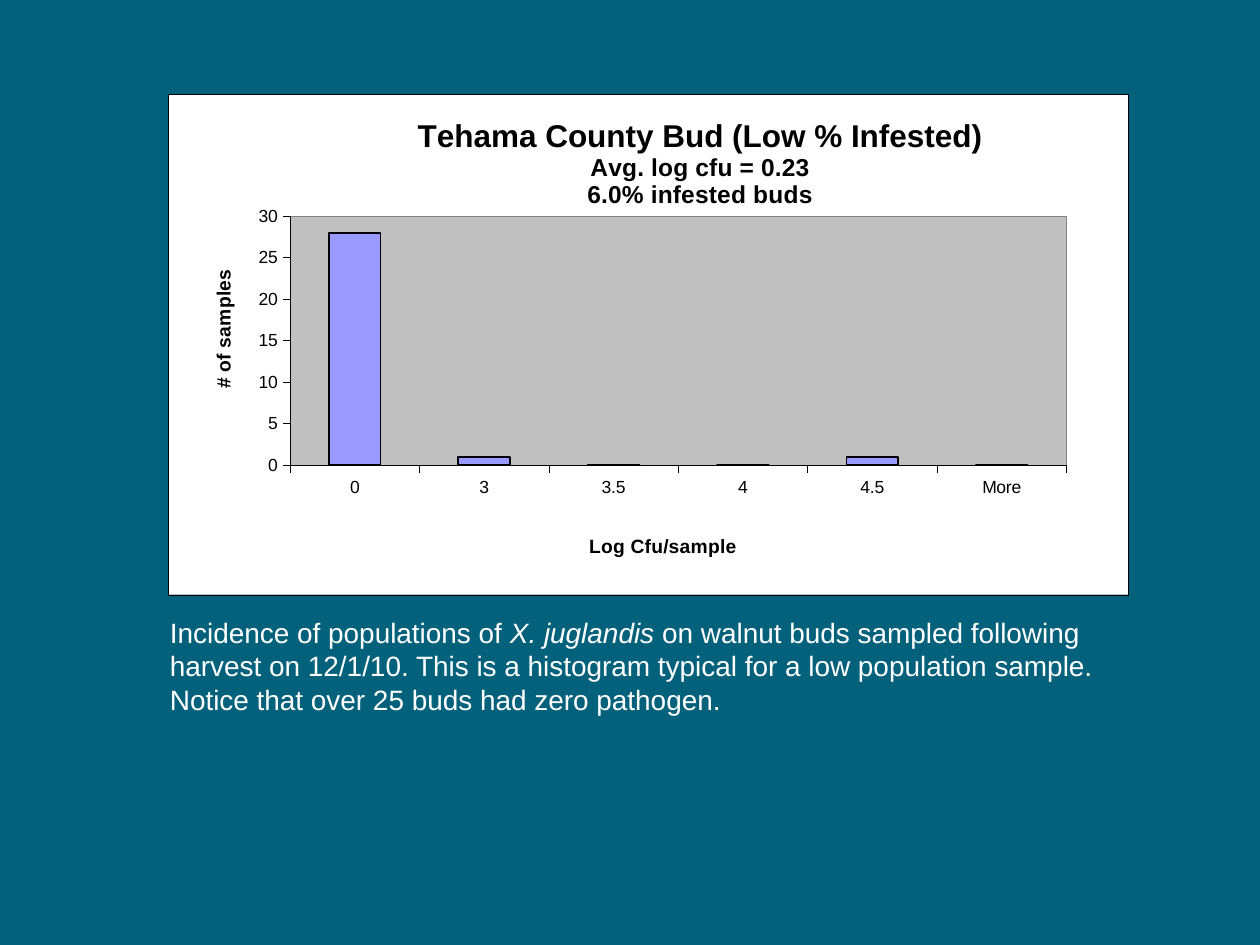
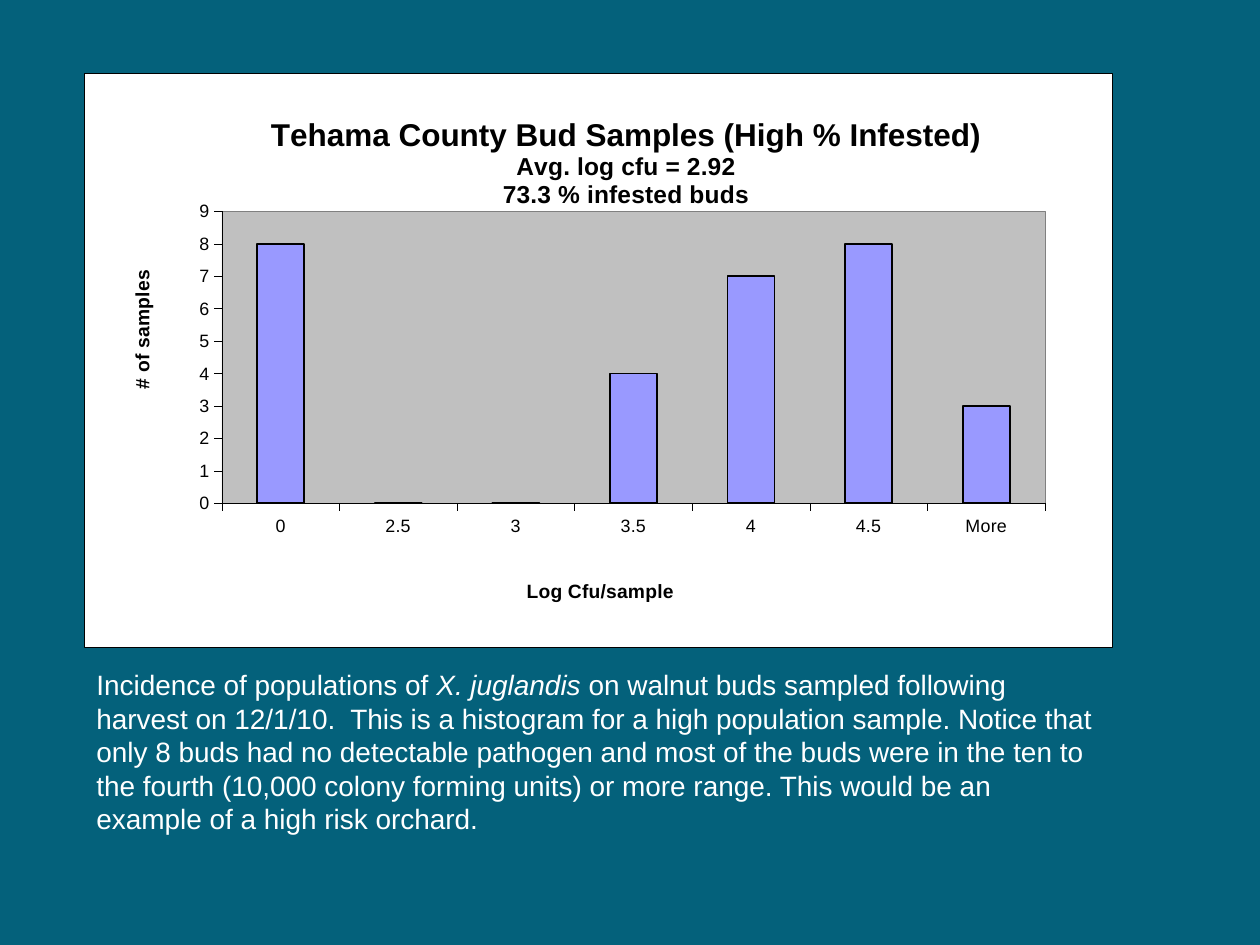
from lxml.etree import fromstring
from pptx import Presentation
from pptx.chart.data import CategoryChartData
from pptx.dml.color import RGBColor
from pptx.enum.chart import XL_CHART_TYPE as ChartType, XL_TICK_MARK as Tick
from pptx.oxml.ns import nsdecls, qn
from pptx.util import Pt

FONT = "Arial"
TEAL, WHITE, BLACK = "04617B", "FFFFFF", "000000"
SILVER, GRAY, PERIWINKLE = "C0C0C0", "808080", "9999FF"


def rgb(hex_color):
    return RGBColor.from_string(hex_color)


def style_font(font, size, color=BLACK, bold=False):
    font.name, font.size, font.bold = FONT, Pt(size), bold
    font.color.rgb = rgb(color)


def style_line(line, color, width):
    line.color.rgb = rgb(color)
    line.width = Pt(width)


def area_format(fill, line):
    """Return a c:spPr with a solid fill and a hairline border."""
    return fromstring(
        f'<c:spPr {nsdecls("c", "a")}>'
        f'<a:solidFill><a:srgbClr val="{fill}"/></a:solidFill>'
        f'<a:ln w="{Pt(0.25)}"><a:solidFill><a:srgbClr val="{line}"/>'
        '</a:solidFill></a:ln></c:spPr>')


def place(element, x, y, w=None, h=None):
    """Fix a chart part at fractions of the chart's width and height."""
    for old in element.findall(qn("c:layout")):
        element.remove(old)
    values = {"x": x, "y": y}
    target = ""
    if w is not None:
        values.update(w=w, h=h)
        target = '<c:layoutTarget val="inner"/>'
    modes = "".join(f'<c:{k}Mode val="edge"/>' for k in "xy")
    sizes = "".join(f'<c:{k} val="{v}"/>' for k, v in values.items())
    layout = fromstring(
        f'<c:layout {nsdecls("c")}><c:manualLayout>{target}{modes}{sizes}'
        '</c:manualLayout></c:layout>')
    tx = element.find(qn("c:tx"))
    if tx is None:
        element.insert(0, layout)
    else:
        tx.addnext(layout)


def set_title(title, lines, sizes, position):
    tf = title.text_frame
    tf.text = "\n".join(lines)
    for p, size in zip(tf.paragraphs, sizes):
        style_font(p.font, size, bold=True)
        for r in p.runs:
            style_font(r.font, size, bold=True)
    place(title._element, *position)


def style_axis(axis, title, label_size, title_at):
    axis.has_major_gridlines = False
    axis.major_tick_mark, axis.minor_tick_mark = Tick.OUTSIDE, Tick.NONE
    style_line(axis.format.line, BLACK, 0.25)
    style_font(axis.tick_labels.font, label_size)
    axis.has_title = True
    set_title(axis.axis_title, [title], [11], title_at)


def add_histogram(s, box, title, counts, top, step, label_size, plot_box,
                  title_at, x_title_at, y_title_at):
    data = CategoryChartData()
    data.categories = list(counts)
    data.add_series("Series 1", list(counts.values()))
    chart = s.shapes.add_chart(ChartType.COLUMN_CLUSTERED,
                               *map(Pt, box), data).chart
    chart.has_legend = False
    style_font(chart.font, label_size)
    chart.has_title = True
    set_title(chart.chart_title, title, [18, 14, 14], title_at)

    style_axis(chart.category_axis, "Log Cfu/sample", label_size, x_title_at)
    style_axis(chart.value_axis, "# of samples", label_size, y_title_at)
    chart.value_axis.minimum_scale = 0
    chart.value_axis.maximum_scale = top
    chart.value_axis.major_unit = step

    plot = chart.plots[0]
    plot.gap_width, plot.vary_by_categories = 150, False
    bars = plot.series[0].format
    bars.fill.solid()
    bars.fill.fore_color.rgb = rgb(PERIWINKLE)
    style_line(bars.line, BLACK, 1)

    chart_node = chart.element.find(qn("c:chart"))
    chart_node.addnext(area_format(WHITE, BLACK))
    plot_area = chart_node.find(qn("c:plotArea"))
    place(plot_area, *plot_box)
    plot_area.append(area_format(SILVER, GRAY))


def add_caption(s, box, finding):
    tf = s.shapes.add_textbox(*map(Pt, box)).text_frame
    tf.word_wrap = True
    p = tf.paragraphs[0]
    p.space_before = Pt(3.2)
    parts = ["Incidence of populations of ", "X. juglandis ",
             "on walnut buds sampled following harvest on 12/1/10." + finding]
    for text in parts:
        r = p.add_run()
        r.text = text
        style_font(r.font, 16, WHITE)
    p.runs[1].font.italic = True


def add_slide(prs):
    s = prs.slides.add_slide(prs.slide_layouts[6])
    s.background.fill.solid()
    s.background.fill.fore_color.rgb = rgb(TEAL)
    return s


def main():
    prs = Presentation()
    prs.slide_width, prs.slide_height = Pt(720), Pt(540)

    low = add_slide(prs)
    add_caption(low, (90, 348, 552, 78),
                " This is a histogram typical for a low population sample. "
                "Notice that over 25 buds had zero pathogen.")
    add_histogram(
        low, (96, 54, 548.6, 286),
        ["Tehama County Bud (Low % Infested)", "Avg. log cfu = 0.23",
         "6.0% infested buds"],
        {"0": 28, "3": 1, "3.5": 0, "4": 0, "4.5": 1, "More": 0},
        top=30, step=5, label_size=10, plot_box=(0.127, 0.243, 0.809, 0.498),
        title_at=(0.256, 0.035), x_title_at=(0.435, 0.87),
        y_title_at=(0.04, 0.343))

    high = add_slide(prs)
    add_caption(high, (48, 378, 588, 108),
                "  This is a histogram for a high population sample. Notice "
                "that only 8 buds had no detectable pathogen and most of the "
                "buds were in the ten to the fourth (10,000 colony forming "
                "units) or more range. This would be an example of a high "
                "risk orchard.")
    add_histogram(
        high, (48, 42, 587.5, 328),
        ["Tehama County Bud Samples (High % Infested)", "Avg. log cfu = 2.92",
         "73.3 % infested buds"],
        {"0": 8, "2.5": 0, "3": 0, "3.5": 4, "4": 7, "4.5": 8, "More": 3},
        top=9, step=1, label_size=10.2, plot_box=(0.134, 0.24, 0.801, 0.509),
        title_at=(0.178, 0.066), x_title_at=(0.427, 0.873),
        y_title_at=(0.04, 0.336))

    prs.save("out.pptx")


if __name__ == "__main__":
    main()
